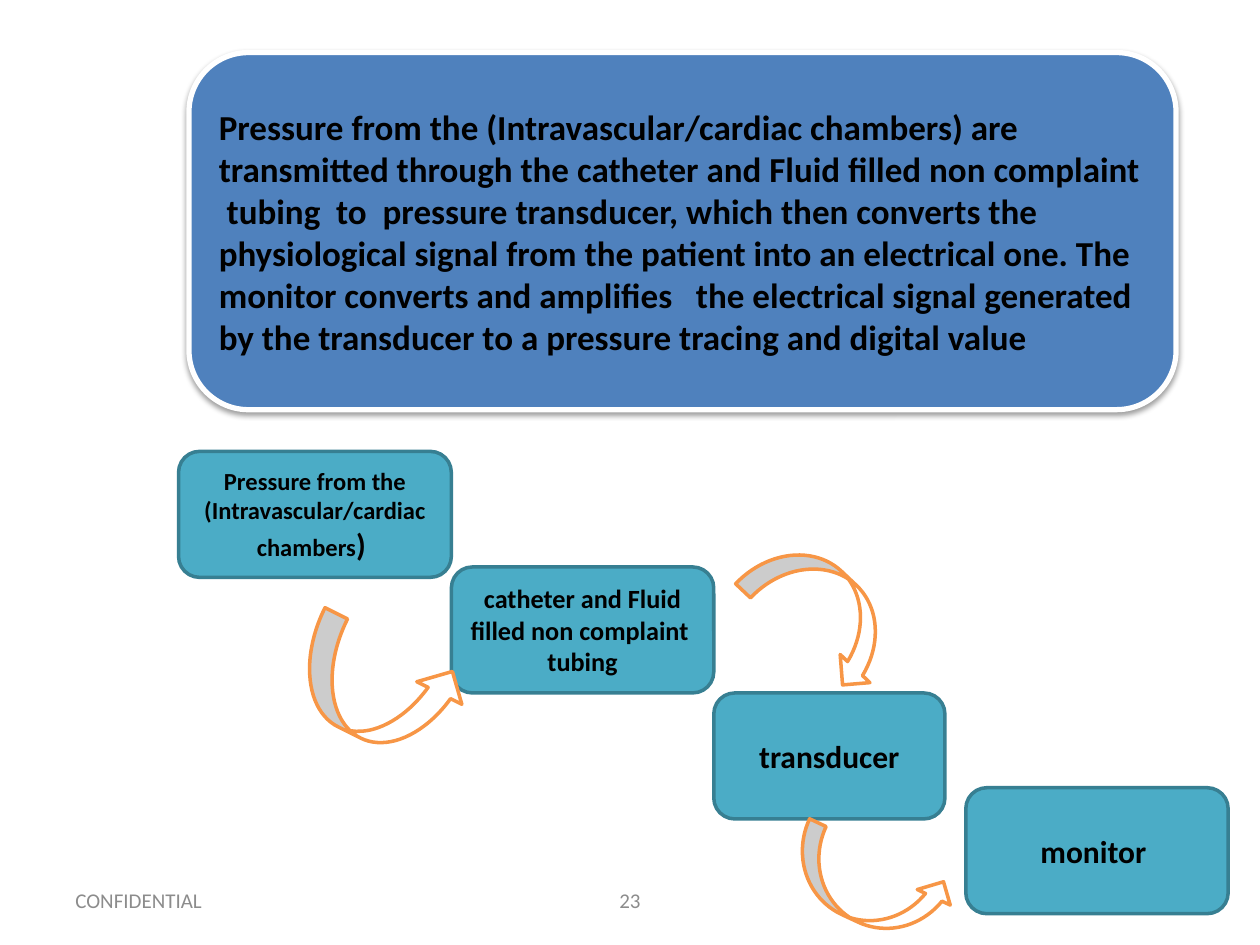
"""Build the pressure monitoring slide: explanation, four signal stages and their arrows."""
from dataclasses import dataclass

from lxml.etree import SubElement
from pptx import Presentation
from pptx.dml.color import RGBColor
from pptx.enum.shapes import MSO_SHAPE
from pptx.enum.text import MSO_ANCHOR, PP_ALIGN
from pptx.oxml.ns import qn
from pptx.shapes.autoshape import Shape
from pptx.slide import Slide
from pptx.util import Cm, Pt


@dataclass(frozen=True)
class Theme:
    font: str = "Calibri"
    ink: str = "000000"
    muted: str = "8C8C8C"
    white: str = "FFFFFF"
    panel: str = "4F81BD"
    stage: str = "4BACC6"
    stage_edge: str = "377F92"
    arrow: str = "F79646"
    footer_size: int = 12
    small_size: int = 14
    medium_size: int = 15
    stage_size: int = 18
    panel_size: int = 20
    edge_width: int = 2
    panel_edge_width: int = 3


@dataclass(frozen=True)
class Box:
    left: float
    top: float
    width: float
    height: float

    def lengths(self) -> tuple[Cm, Cm, Cm, Cm]:
        return Cm(self.left), Cm(self.top), Cm(self.width), Cm(self.height)


@dataclass(frozen=True)
class Stage:
    box: Box
    runs: tuple[tuple[str, int], ...]


@dataclass(frozen=True)
class Arrow:
    preset: MSO_SHAPE
    box: Box
    rotation: float


@dataclass(frozen=True)
class FooterItem:
    box: Box
    text: str
    align: PP_ALIGN


THEME = Theme()
STAGE_HEIGHT = 2.54

EXPLANATION_BOX = Box(3.81, 1.06, 19.9, 7.2)
EXPLANATION = (
    "Pressure from the (Intravascular/cardiac chambers) are transmitted through "
    "the catheter and Fluid filled non complaint  tubing  to  pressure transducer, "
    "which then converts the physiological signal from the patient into an electrical "
    "one. The monitor converts and amplifies   the electrical signal generated by the "
    "transducer to a pressure tracing and digital value"
)

STAGES = (
    Stage(Box(3.6, 9.1, 5.5, STAGE_HEIGHT),
          (("Pressure from the (Intravascular/cardiac chambers", THEME.small_size),
           (") ", THEME.stage_size))),
    Stage(Box(9.1, 11.43, 5.29, STAGE_HEIGHT),
          (("catheter and Fluid filled non complaint  tubing", THEME.medium_size),)),
    Stage(Box(14.39, 13.97, 4.66, STAGE_HEIGHT), (("transducer", THEME.stage_size),)),
    Stage(Box(19.47, 15.88, 5.29, STAGE_HEIGHT), (("monitor ", THEME.stage_size),)),
)

ARROWS = (
    Arrow(MSO_SHAPE.CURVED_UP_ARROW, Box(5.92, 12.9, 3.38, 2.03), 26.6),
    Arrow(MSO_SHAPE.CURVED_LEFT_ARROW, Box(15.8, 10.64, 1.65, 3.38), 313.4),
    Arrow(MSO_SHAPE.CURVED_UP_ARROW, Box(15.85, 17.15, 3.35, 1.47), 25.2),
)

FOOTER = (
    FooterItem(Box(1.27, 17.65, 5.93, 1.01), "CONFIDENTIAL", PP_ALIGN.LEFT),
    FooterItem(Box(8.68, 17.65, 8.04, 1.01), "23", PP_ALIGN.CENTER),
)


def write_text(shape: Shape, *runs: tuple[str, int], color: str = THEME.ink,
               bold: bool = True, align: PP_ALIGN = PP_ALIGN.CENTER) -> None:
    frame = shape.text_frame
    frame.word_wrap = True
    frame.vertical_anchor = MSO_ANCHOR.MIDDLE
    paragraph = frame.paragraphs[0]
    paragraph.alignment = align
    for text, size in runs:
        run = paragraph.add_run()
        run.text = text
        run.font.name = THEME.font
        run.font.size = Pt(size)
        run.font.bold = bold
        run.font.color.rgb = RGBColor.from_string(color)


def draw_shape(slide: Slide, preset: MSO_SHAPE, box: Box, fill: str, edge: str,
               edge_width: float = THEME.edge_width) -> Shape:
    shape = slide.shapes.add_shape(preset, *box.lengths())
    shape.shadow.inherit = False
    shape.fill.solid()
    shape.fill.fore_color.rgb = RGBColor.from_string(fill)
    shape.line.color.rgb = RGBColor.from_string(edge)
    shape.line.width = Pt(edge_width)
    return shape


def add_shadow(shape: Shape) -> None:
    effects = shape.element.spPr.find(qn("a:effectLst"))
    shadow = SubElement(effects, qn("a:outerShdw"), blurRad=str(Pt(3.1)),
                        dist=str(Pt(1.6)), dir="5400000", rotWithShape="0")
    color = SubElement(shadow, qn("a:srgbClr"), val=THEME.ink)
    SubElement(color, qn("a:alpha"), val="38000")


def draw_explanation(slide: Slide) -> None:
    panel = draw_shape(slide, MSO_SHAPE.ROUNDED_RECTANGLE, EXPLANATION_BOX,
                       THEME.panel, THEME.white, THEME.panel_edge_width)
    add_shadow(panel)
    write_text(panel, (EXPLANATION, THEME.panel_size), align=PP_ALIGN.LEFT)


def draw_stage(slide: Slide, stage: Stage) -> None:
    shape = draw_shape(slide, MSO_SHAPE.ROUNDED_RECTANGLE, stage.box,
                       THEME.stage, THEME.stage_edge)
    write_text(shape, *stage.runs)


def draw_arrow(slide: Slide, arrow: Arrow) -> None:
    shape = draw_shape(slide, arrow.preset, arrow.box, THEME.white, THEME.arrow)
    shape.rotation = arrow.rotation


def draw_footer_item(slide: Slide, item: FooterItem) -> None:
    label = slide.shapes.add_textbox(*item.box.lengths())
    write_text(label, (item.text, THEME.footer_size), color=THEME.muted,
               bold=False, align=item.align)


def main() -> None:
    presentation = Presentation()
    presentation.slide_width = Cm(25.4)
    presentation.slide_height = Cm(19.05)
    slide = presentation.slides.add_slide(presentation.slide_layouts[6])
    for item in FOOTER:
        draw_footer_item(slide, item)
    draw_explanation(slide)
    for stage in STAGES:
        draw_stage(slide, stage)
    for arrow in ARROWS:
        draw_arrow(slide, arrow)
    presentation.save("out.pptx")


if __name__ == "__main__":
    main()
